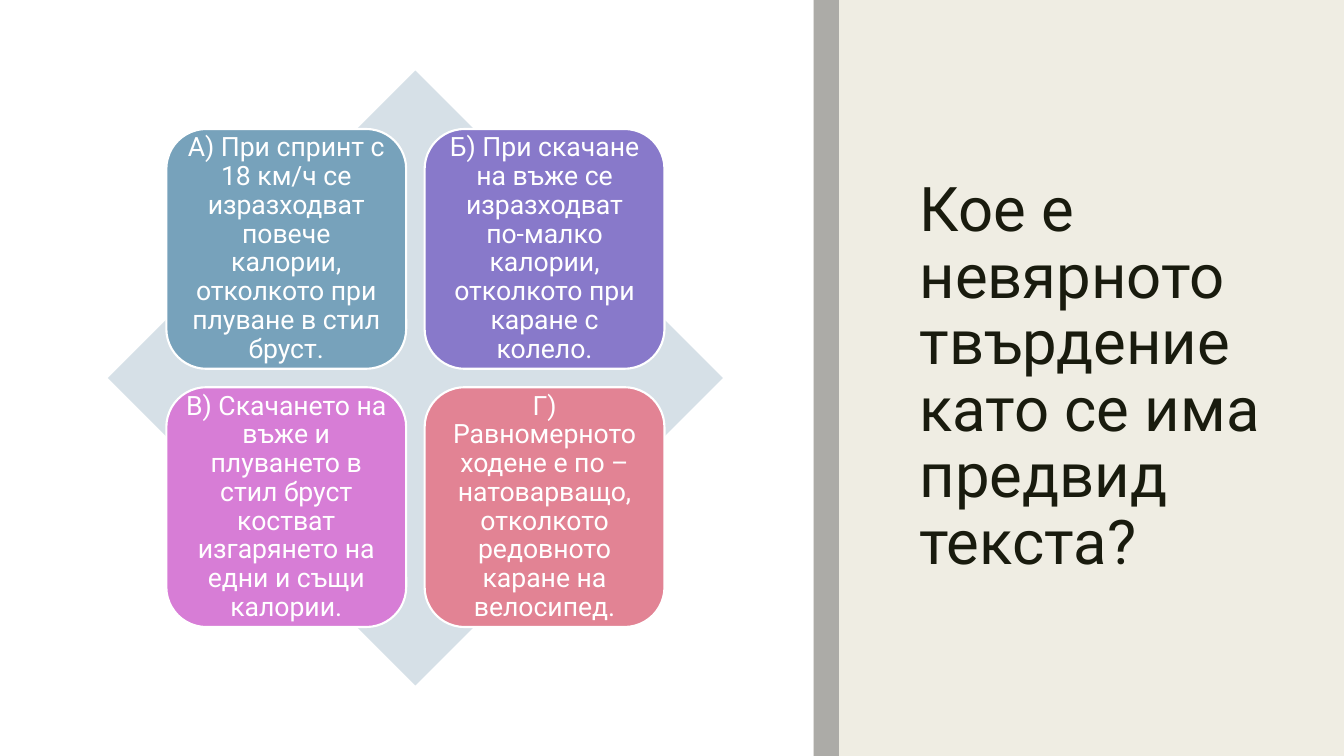
from lxml import etree
from pptx import Presentation
from pptx.dml.color import RGBColor
from pptx.enum.shapes import MSO_SHAPE
from pptx.enum.text import MSO_ANCHOR, MSO_AUTO_SIZE, PP_ALIGN
from pptx.oxml.ns import qn
from pptx.util import Inches, Pt

RECTANGLE = MSO_SHAPE.RECTANGLE
DIAMOND = MSO_SHAPE.DIAMOND
ROUNDED = MSO_SHAPE.ROUNDED_RECTANGLE
MIDDLE = MSO_ANCHOR.MIDDLE
LEFT, CENTER = PP_ALIGN.LEFT, PP_ALIGN.CENTER
NO_AUTOFIT = MSO_AUTO_SIZE.NONE

SLIDE_WIDTH, SLIDE_HEIGHT = 13.33, 7.5
PANEL_WIDTH, STRIPE_WIDTH = 8.07, 0.25
DIAMOND_LEFT, DIAMOND_TOP, DIAMOND_SIZE = 1.07, 0.7, 6.1
CARD_SIZE = DIAMOND_SIZE * 0.39
CARD_OFFSET = DIAMOND_SIZE * 0.095
CARD_STEP = DIAMOND_SIZE * 0.42

TITLE = "Кое е невярното твърдение като се има предвид текста?"
ANSWERS = [
    ("А) При спринт с 18 км/ч се изразходват повече калории, отколкото при плуване в стил бруст.", "77A2BB"),
    ("Б) При скачане на въже се изразходват по-малко калории, отколкото при каране с колело.", "8879CA"),
    ("В) Скачането на въже и плуването в стил бруст костват изгарянето на едни и същи калории.", "D77DD6"),
    ("Г) Равномерното ходене е по – натоварващо, отколкото редовното каране на велосипед.", "E28394"),
]


def color(hex_string):
    return RGBColor.from_string(hex_string)


def write_text(shape, text, *, size, hex_color, alignment, margin):
    frame = shape.text_frame
    frame.word_wrap = True
    frame.auto_size = NO_AUTOFIT
    frame.vertical_anchor = MIDDLE
    frame.margin_left = frame.margin_right = Inches(margin)
    frame.margin_top = frame.margin_bottom = Inches(margin)
    paragraph = frame.paragraphs[0]
    paragraph.alignment = alignment
    paragraph.line_spacing = 0.9
    run = paragraph.add_run()
    run.text = text
    run.font.name = "Roboto"
    run.font.size = Pt(size)
    run.font.color.rgb = color(hex_color)


def add_block(slide, kind, left, top, width, height, fill, line=None, opacity=None):
    shape = slide.shapes.add_shape(
        kind, Inches(left), Inches(top), Inches(width), Inches(height))
    shape.shadow.inherit = False
    shape.fill.solid()
    shape.fill.fore_color.rgb = color(fill)
    if opacity is not None:
        fill_color = shape.element.spPr.find(qn("a:solidFill"))[0]
        etree.SubElement(fill_color, qn("a:alpha")).set("val", str(opacity * 1000))
    if line:
        shape.line.color.rgb = color(line)
        shape.line.width = Pt(1.5)
    else:
        shape.line.fill.background()
    return shape


def add_title(slide):
    title = slide.shapes.title
    title.left, title.top = Inches(9.02), Inches(DIAMOND_TOP)
    title.width, title.height = Inches(3.61), Inches(DIAMOND_SIZE)
    write_text(title, TITLE, size=44, hex_color="191B0E", alignment=LEFT, margin=0.1)
    title.element.getparent().append(title.element)


def add_answer(slide, index, text, fill):
    row, column = divmod(index, 2)
    card = add_block(
        slide, ROUNDED,
        DIAMOND_LEFT + CARD_OFFSET + column * CARD_STEP,
        DIAMOND_TOP + CARD_OFFSET + row * CARD_STEP,
        CARD_SIZE, CARD_SIZE, fill, line="FFFFFF")
    write_text(card, text, size=19, hex_color="FFFFFF", alignment=CENTER, margin=0.08)


def main():
    presentation = Presentation()
    presentation.slide_width = Inches(SLIDE_WIDTH)
    presentation.slide_height = Inches(SLIDE_HEIGHT)
    slide = presentation.slides.add_slide(presentation.slide_layouts.get_by_name("Title Only"))

    add_block(slide, RECTANGLE, 0, 0, SLIDE_WIDTH, SLIDE_HEIGHT, "EFEDE3")
    add_title(slide)
    add_block(slide, RECTANGLE, 0, 0, PANEL_WIDTH, SLIDE_HEIGHT, "FFFFFF")
    add_block(slide, RECTANGLE, PANEL_WIDTH, 0, STRIPE_WIDTH, SLIDE_HEIGHT, "808080", opacity=60)
    add_block(slide, DIAMOND, DIAMOND_LEFT, DIAMOND_TOP, DIAMOND_SIZE, DIAMOND_SIZE, "D6E0E7")
    for index, (text, fill) in enumerate(ANSWERS):
        add_answer(slide, index, text, fill)

    presentation.save("out.pptx")


if __name__ == "__main__":
    main()
